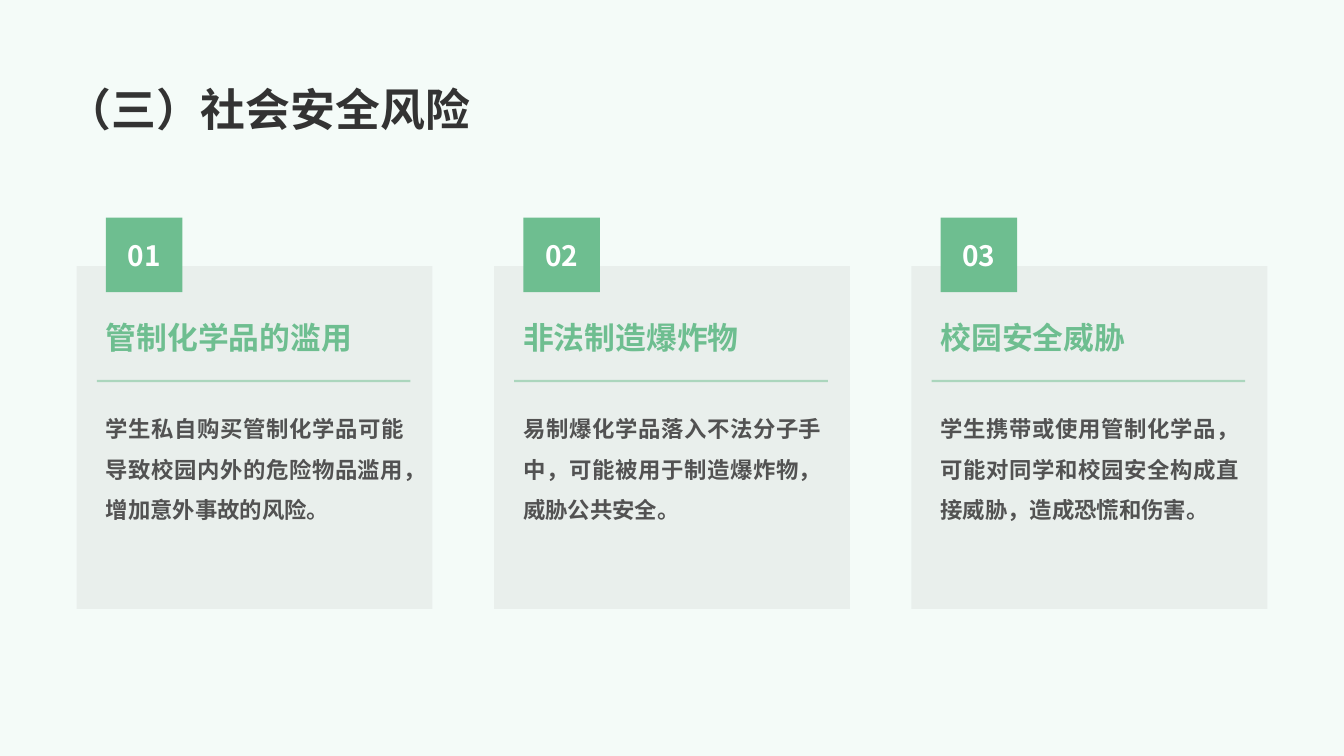
from lxml.etree import SubElement
from pptx import Presentation
from pptx.dml.color import RGBColor
from pptx.enum.shapes import MSO_CONNECTOR, MSO_SHAPE
from pptx.enum.text import MSO_ANCHOR, MSO_AUTO_SIZE, PP_ALIGN
from pptx.oxml.ns import qn
from pptx.util import Inches, Pt

GREEN = "6EBE90"
CARDS = [
    ("管制化学品的滥用",
     "学生私自购买管制化学品可能导致校园内外的危险物品滥用，增加意外事故的风险。"),
    ("非法制造爆炸物",
     "易制爆化学品落入不法分子手中，可能被用于制造爆炸物，威胁公共安全。"),
    ("校园安全威胁",
     "学生携带或使用管制化学品，可能对同学和校园安全构成直接威胁，造成恐慌和伤害。"),
]


def paint(color, code):
    color.rgb = RGBColor.from_string(code)


def fade(shape, percent):
    """Give the colours of a shape this opacity."""
    for node in shape._element.spPr.iter(qn("a:srgbClr")):
        SubElement(node, qn("a:alpha"), val=str(percent * 1000))


class Page:
    def __init__(self, slide, font):
        self.slide = slide
        self.font = font

    def label(self, shape, words, size, code, anchor=MSO_ANCHOR.TOP,
              align=PP_ALIGN.LEFT, wrap=True, spacing=None):
        """Fill a shape with one bold paragraph and no margins."""
        frame = shape.text_frame
        frame.auto_size = MSO_AUTO_SIZE.NONE
        frame.word_wrap = wrap
        frame.vertical_anchor = anchor
        frame.margin_left = frame.margin_right = 0
        frame.margin_top = frame.margin_bottom = 0
        para = frame.paragraphs[0]
        para.text = words
        para.alignment = align
        para.line_spacing = spacing
        font = para.font
        font.size = Pt(size)
        font.bold = True
        paint(font.color, code)
        font.name = self.font
        style = para._p.pPr.find(qn("a:defRPr"))
        SubElement(style, qn("a:ea"), typeface=self.font)

    def title(self, words, left, top, width, height):
        shape = self.slide.shapes.title
        shape.left, shape.top = Inches(left), Inches(top)
        shape.width, shape.height = Inches(width), Inches(height)
        self.label(shape, words, 32, "333333", MSO_ANCHOR.BOTTOM)

    def block(self, left, top, width, height, code):
        shape = self.slide.shapes.add_shape(
            MSO_SHAPE.RECTANGLE, Inches(left), Inches(top),
            Inches(width), Inches(height))
        shape.shadow.inherit = False
        shape.fill.solid()
        paint(shape.fill.fore_color, code)
        shape.line.fill.background()
        return shape

    def text(self, left, top, width, height, words, size, code, **style):
        box = self.slide.shapes.add_textbox(
            Inches(left), Inches(top), Inches(width), Inches(height))
        self.label(box, words, size, code, **style)

    def rule(self, left, top, width):
        line = self.slide.shapes.add_connector(
            MSO_CONNECTOR.STRAIGHT, Inches(left), Inches(top),
            Inches(left + width), Inches(top))
        line.line.width = Pt(1.75)
        line.line.fill.solid()
        paint(line.line.fill.fore_color, GREEN)
        fade(line, 50)
        SubElement(line._element.spPr, qn("a:effectLst"))

    def card(self, left, number, head, body):
        inner = left + 0.29
        panel = self.block(left, 2.64, 3.53, 3.4, "ADADAD")
        fade(panel, 15)
        self.text(inner, 3.99, 2.96, 1.76, body, 16, "525252",
                  align=PP_ALIGN.JUSTIFY, spacing=1.5)
        badge = self.block(inner, 2.16, 0.76, 0.74, GREEN)
        self.label(badge, f"{number:02}", 20, "FFFFFF", MSO_ANCHOR.MIDDLE,
                   PP_ALIGN.CENTER, wrap=False)
        self.text(inner, 3.11, 2.96, 0.48, head, 22, GREEN,
                  anchor=MSO_ANCHOR.MIDDLE)
        self.rule(left + 0.2, 3.78, 3.11)


def main():
    deck = Presentation()
    deck.slide_width, deck.slide_height = Inches(13.33), Inches(7.5)
    slide = deck.slides.add_slide(deck.slide_layouts[5])
    back = slide.background.fill
    back.solid()
    paint(back.fore_color, "F4FBF8")
    page = Page(slide, "Noto Sans CJK SC")
    page.title("（三）社会安全风险", 0.66, 0.55, 11.81, 0.79)
    for index, (head, body) in enumerate(CARDS):
        page.card(0.76 + 4.14 * index, index + 1, head, body)
    deck.save("out.pptx")


if __name__ == "__main__":
    main()
